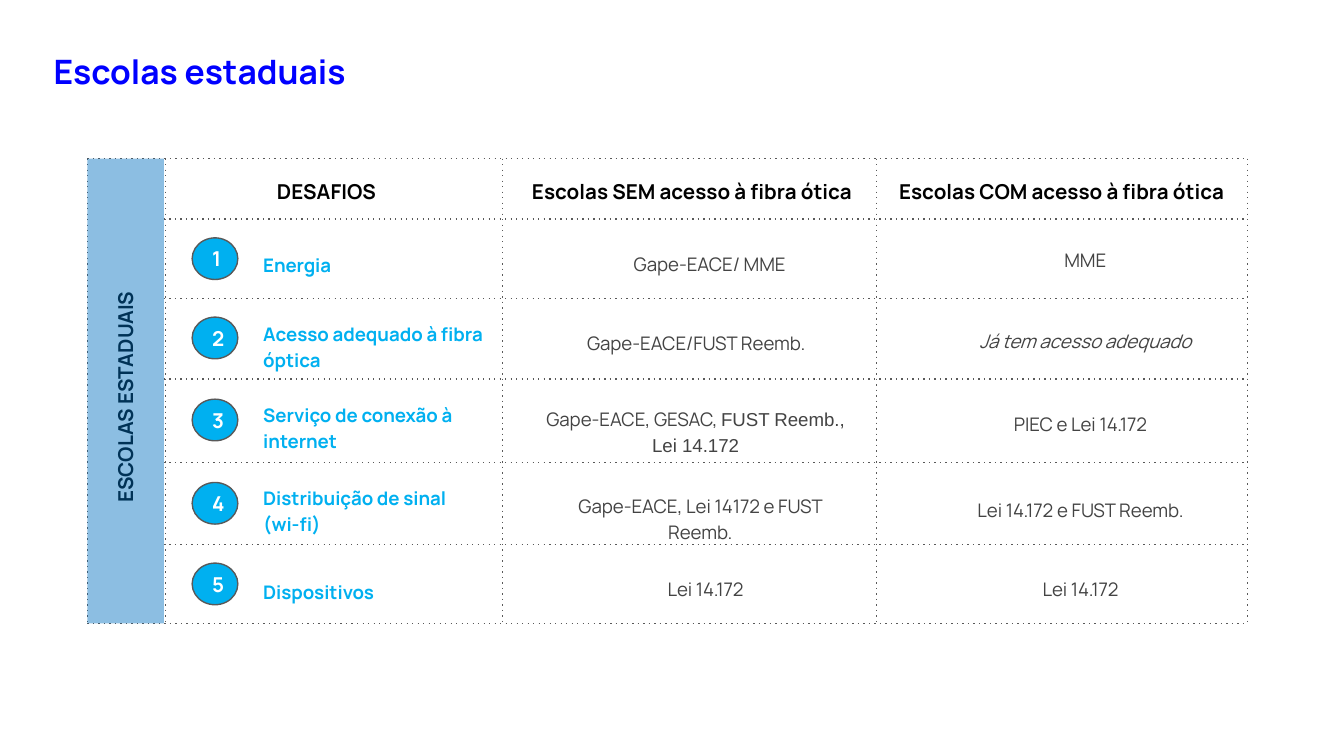
from lxml import etree
from pptx import Presentation
from pptx.dml.color import RGBColor
from pptx.enum.shapes import MSO_CONNECTOR, MSO_SHAPE
from pptx.enum.text import MSO_ANCHOR, MSO_AUTO_SIZE, PP_ALIGN
from pptx.oxml.ns import qn
from pptx.util import Inches, Pt

STRAIGHT = MSO_CONNECTOR.STRAIGHT
OVAL = MSO_SHAPE.OVAL
RECTANGLE = MSO_SHAPE.RECTANGLE
MIDDLE = MSO_ANCHOR.MIDDLE
GROW = MSO_AUTO_SIZE.SHAPE_TO_FIT_TEXT
LEFT = PP_ALIGN.LEFT
CENTER = PP_ALIGN.CENTER

BLUE = RGBColor(0x00, 0x00, 0xFF)
CYAN = RGBColor(0x00, 0xB0, 0xF0)
BAND_BLUE = RGBColor(0x00, 0x70, 0xC0)
BLACK = RGBColor(0x00, 0x00, 0x00)
WHITE = RGBColor(0xFF, 0xFF, 0xFF)
DARK_GRAY = RGBColor(0x43, 0x43, 0x43)
LINE_GRAY = RGBColor(0x59, 0x59, 0x59)

FONT = "Manrope"
TABLE_LEFT, GRID_LEFT, TABLE_RIGHT = 0.65, 1.22, 9.28
TABLE_TOP, TABLE_BOTTOM = 1.18, 4.64
ROW_TOPS = [1.63, 2.22, 2.82, 3.44, 4.05]
BADGE_TOPS = [1.77, 2.36, 2.97, 3.59, 4.19]
COLUMN_EDGES = [TABLE_LEFT, 1.23, 3.74, 6.52, TABLE_RIGHT]
ONE_LINE, TWO_LINES = 0.4, 0.59

HEADERS = [
    (0.98, "DESAFIOS"),
    (3.7, "Escolas SEM acesso à fibra ótica"),
    (6.45, "Escolas COM acesso à fibra ótica"),
]
CHALLENGES = [
    (1.77, ONE_LINE, "Energia"),
    (2.28, TWO_LINES, "Acesso adequado à fibra óptica"),
    (2.88, TWO_LINES, "Serviço de conexão à internet"),
    (3.5, TWO_LINES, "Distribuição de sinal (wi-fi)"),
    (4.2, ONE_LINE, "Dispositivos"),
]
WITHOUT_FIBER = [
    (4.35, 1.76, 1.86, ONE_LINE, "Gape-EACE/ MME"),
    (4.15, 2.35, 2.06, ONE_LINE, "Gape-EACE/FUST Reemb."),
    (3.92, 2.91, 2.51, TWO_LINES, "Gape-EACE, GESAC, "),
    (4.07, 3.56, 2.28, TWO_LINES, "Gape-EACE, Lei 14172 e FUST Reemb."),
    (4.32, 4.18, 1.86, ONE_LINE, "Lei 14.172"),
]
WITH_FIBER = [
    (6.96, 1.73, 2.23, ONE_LINE, "MME"),
    (6.96, 2.33, 2.23, ONE_LINE, "Já tem acesso adequado"),
    (7.11, 2.95, 1.86, ONE_LINE, "PIEC e Lei 14.172"),
    (7.11, 3.59, 1.86, ONE_LINE, "Lei 14.172 e FUST Reemb."),
    (7.11, 4.18, 1.86, ONE_LINE, "Lei 14.172"),
]


def write_text(frame, text, size, color, bold, align):
    frame.word_wrap = True
    frame.margin_left = frame.margin_right = Inches(0.1)
    frame.margin_top = frame.margin_bottom = Inches(0.1)
    paragraph = frame.paragraphs[0]
    paragraph.add_run().text = text
    paragraph.alignment = align
    font = paragraph.font
    font.name, font.size, font.bold = FONT, Pt(size), bold
    font.color.rgb = color


def add_label(slide, left, top, width, height, text, size=11, color=BLACK,
              bold=True, align=CENTER):
    label = slide.shapes.add_textbox(
        Inches(left), Inches(top), Inches(width), Inches(height))
    write_text(label.text_frame, text, size, color, bold, align)
    label.text_frame.auto_size = GROW
    return label


def add_cell(slide, left, top, width, height, text, color=DARK_GRAY,
             bold=False, align=CENTER):
    cell = add_label(slide, left, top, width, height, text, 10, color, bold, align)
    paragraph = cell.text_frame.paragraphs[0]
    paragraph.line_spacing = 1.15
    return paragraph


def add_dotted_line(slide, x1, y1, x2, y2):
    rule = slide.shapes.add_connector(
        STRAIGHT, Inches(x1), Inches(y1), Inches(x2), Inches(y2))
    rule.line.width = Pt(0.75)
    rule.line.color.rgb = LINE_GRAY
    properties = rule.element.spPr
    outline = properties.find(qn("a:ln"))
    etree.SubElement(outline, qn("a:prstDash"), val="dot")
    etree.SubElement(properties, qn("a:effectLst"))


def add_filled_shape(slide, kind, left, top, width, height, color):
    shape = slide.shapes.add_shape(
        kind, Inches(left), Inches(top), Inches(width), Inches(height))
    shape.shadow.inherit = False
    shape.fill.solid()
    shape.fill.fore_color.rgb = color
    return shape


def add_badge(slide, top, number):
    badge = add_filled_shape(slide, OVAL, 1.43, top, 0.34, 0.31, CYAN)
    badge.line.color.rgb = LINE_GRAY
    badge.line.width = Pt(0.75)
    write_text(badge.text_frame, str(number), 11, WHITE, True, CENTER)
    badge.text_frame.vertical_anchor = MIDDLE


def add_side_band(slide):
    add_label(slide, -0.51, 2.76, 2.9, 0.39, "ESCOLAS ESTADUAIS").rotation = 270
    band = add_filled_shape(slide, RECTANGLE, TABLE_LEFT, TABLE_TOP,
                            GRID_LEFT - TABLE_LEFT, TABLE_BOTTOM - TABLE_TOP, BAND_BLUE)
    band.line.fill.background()
    band_color = band.element.spPr.find(qn("a:solidFill"))[0]
    etree.SubElement(band_color, qn("a:alpha"), val="45000")


def add_grid(slide):
    for y in (TABLE_TOP, TABLE_BOTTOM):
        add_dotted_line(slide, TABLE_LEFT, y, TABLE_RIGHT, y)
    for y in ROW_TOPS:
        add_dotted_line(slide, GRID_LEFT, y, TABLE_RIGHT, y)
    for x in COLUMN_EDGES:
        add_dotted_line(slide, x, TABLE_TOP, x, TABLE_BOTTOM)


def main():
    presentation = Presentation()
    presentation.slide_width = Inches(10)
    presentation.slide_height = Inches(10 * 9 / 16)
    slide = presentation.slides.add_slide(presentation.slide_layouts[6])

    add_label(slide, 0.3, 0.28, 7.52, 0.5, "Escolas estaduais", 18, BLUE, align=LEFT)
    add_grid(slide)
    for left, header in HEADERS:
        add_label(slide, left, 1.24, 2.9, 0.39, header)
    for number, top in enumerate(BADGE_TOPS, start=1):
        add_badge(slide, top, number)
    for top, height, challenge in CHALLENGES:
        add_cell(slide, 1.86, top, 1.85, height, challenge, CYAN, True, LEFT)

    without_fiber = [add_cell(slide, *cell) for cell in WITHOUT_FIBER]
    funding = without_fiber[2].add_run()
    funding.text = "FUST Reemb., Lei 14.172"
    funding.font.name = "Arial"

    with_fiber = [add_cell(slide, *cell) for cell in WITH_FIBER]
    with_fiber[1].font.italic = True

    add_side_band(slide)
    presentation.save("out.pptx")


if __name__ == "__main__":
    main()
